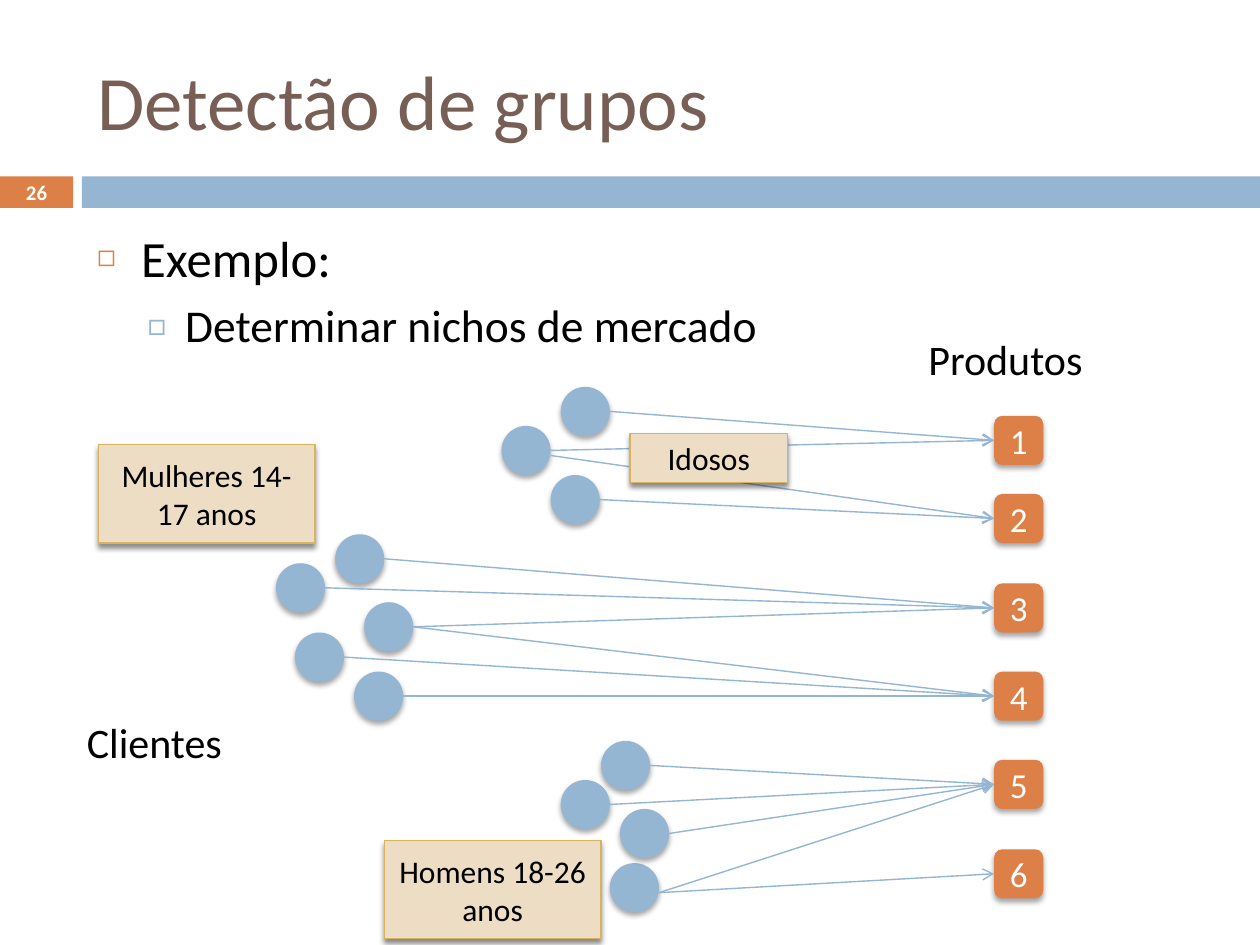
from lxml import etree
from pptx import Presentation
from pptx.dml.color import RGBColor
from pptx.enum.shapes import MSO_CONNECTOR, MSO_SHAPE
from pptx.enum.text import MSO_ANCHOR, MSO_AUTO_SIZE, PP_ALIGN
from pptx.oxml.ns import qn
from pptx.util import Inches, Pt

RECT, ROUND, OVAL = MSO_SHAPE.RECTANGLE, MSO_SHAPE.ROUNDED_RECTANGLE, MSO_SHAPE.OVAL
STRAIGHT = MSO_CONNECTOR.STRAIGHT
LEFT, MID = PP_ALIGN.LEFT, PP_ALIGN.CENTER
TOP, CENTER = MSO_ANCHOR.TOP, MSO_ANCHOR.MIDDLE
FIXED = MSO_AUTO_SIZE.NONE

WIDE, TALL = Inches(10), Inches(7.5)
COL, ROW = WIDE / 10, TALL / 7.5
BLUE, RUST, BROWN, SAND, GOLD = "94B6D2", "DD8047", "775F55", "EDDDC4", "D8B25C"
BLACK, WHITE = "000000", "FFFFFF"
FONT = "Calibri"
SIDE, THIN = 0.39, 0.79
SOFT, DEEP = (35, 2), (45, 2.4)

ITEMS = [
    ("Exemplo:", 29, 7, 0.35, 0.35, "◻", RUST, 60),
    ("Determinar nichos de mercado", 26, 5.5, 0.7, 0.3, "□", BLUE, 70),
]
GOODS_X = 7.39
GOODS = [0.8, 1.42, 2.13, 2.83, 3.53, 4.24]
BUYERS = [
    (1.84, 2.52, [(4, 0)]),
    (2.16, 1.74, [(3, 0)]),
    (3.48, 0.88, [(1, 0), (2, 0.04)]),
    (3.95, 0.57, [(1, 0)]),
    (1.69, 1.97, [(3, 0)]),
    (2.39, 2.28, [(3, 0), (4, 0)]),
    (3.87, 1.27, [(2, 0)]),
    (2.31, 2.83, [(4, 0)]),
    (3.95, 3.69, [(5, 0)]),
    (4.27, 3.38, [(5, 0)]),
    (4.34, 4.35, [(5, 0.04), (6, 0.04)]),
    (4.42, 3.92, [(5, 0)]),
]
LABELS = [("Clientes", 0.09, 3.14, 1.72, 0.5), ("Produtos", 6.77, 0.1, 1.8, 0.5)]
NOTES = [
    ("Idosos", 4.5, 0.94, 1.25, 0.39),
    ("Mulheres 14-17 anos", 0.28, 1.03, 1.72, 0.78),
    ("Homens 18-26 anos", 2.55, 4.17, 1.72, 0.78),
]


def tint(code):
    """Turn a hex string into a colour."""
    return RGBColor.from_string(code)


def span(box, x, y, w, h):
    """Give the slide lengths of a part of a box, in columns and rows."""
    return [round(n) for n in ((box[0] + x) * COL, (box[1] + y) * ROW, w * COL, h * ROW)]


def node(root, tag, **attrs):
    """Add a drawing element under a parent."""
    return etree.SubElement(root, qn(tag), attrs)


def write(para, text, size=18, color=BLACK, bold=False, align=LEFT):
    """Put formatted text in a paragraph."""
    para.alignment = align
    run = para.add_run()
    run.text = text
    font = run.font
    font.name, font.size, font.bold = FONT, Pt(size), bold
    font.color.rgb = tint(color)


def frame(shape, anchor):
    """Make the text frame of a shape wrap at a fixed size."""
    body = shape.text_frame
    body.word_wrap, body.auto_size, body.vertical_anchor = True, FIXED, anchor
    return body


def label(slide, area, text, anchor=TOP, **style):
    """Add a text box."""
    box = slide.shapes.add_textbox(*area)
    write(frame(box, anchor).paragraphs[0], text, **style)


def block(slide, kind, area, fill, edge=None, shade=None, text=None, **style):
    """Add a filled shape with optional edge, shadow and centred text."""
    shape = slide.shapes.add_shape(kind, *area)
    shape.fill.solid()
    shape.fill.fore_color.rgb = tint(fill)
    shape.shadow.inherit = False
    if edge:
        shape.line.color.rgb = tint(edge)
        shape.line.width = Pt(THIN)
    else:
        shape.line.fill.background()
    if shade:
        alpha, drop = shade
        glow = node(shape.element.spPr.find(qn("a:effectLst")), "a:outerShdw",
                    blurRad=str(Pt(3)), dist=str(Pt(drop)), dir="5400000", rotWithShape="0")
        node(node(glow, "a:srgbClr", val=BLACK), "a:alpha", val=str(alpha * 1000))
    if text:
        write(frame(shape, CENTER).paragraphs[0], text, align=MID, **style)


def arrow(slide, start, end):
    """Draw a thin arrow between two points."""
    link = slide.shapes.add_connector(STRAIGHT, *start, *end)
    link.line.color.rgb = tint(BLUE)
    link.line.width = Pt(THIN)
    props = link.element.spPr
    node(props.find(qn("a:ln")), "a:tailEnd", type="arrow")
    node(props, "a:effectLst")


def seat(shape, area):
    """Move a placeholder to an area."""
    shape.left, shape.top, shape.width, shape.height = area


def head(slide, box):
    """Place the title above the band with the page number."""
    title = slide.shapes.title
    seat(title, span(box, 0.67, 0.25, 8.92, 1.08))
    write(frame(title, CENTER).paragraphs[0], "Detectão de grupos", size=44, color=BROWN)
    block(slide, RECT, span(box, 0, 1.4, 0.58, 0.25), RUST)
    block(slide, RECT, span(box, 0.65, 1.4, 9.35, 0.25), BLUE)
    label(slide, span(box, 0, 1.39, 0.58, 0.27), "26", anchor=CENTER,
          size=11.9, color=WHITE, bold=True, align=MID)


def points(slide, box):
    """Fill the body with the two bulleted levels."""
    body = slide.placeholders[1]
    seat(body, span(box, 0, 0, *box[2:]))
    text = frame(body, TOP)
    for level, (words, size, gap, left, hang, mark, color, share) in enumerate(ITEMS):
        para = text.add_paragraph() if level else text.paragraphs[0]
        para.level = level
        write(para, words, size=size)
        para.space_before = Pt(gap)
        props = para._p.get_or_add_pPr()
        props.set("marL", str(Inches(left)))
        props.set("indent", str(-Inches(hang)))
        node(node(props, "a:buClr"), "a:srgbClr", val=color)
        node(props, "a:buSzPct", val=str(share * 1000))
        node(props, "a:buFont", typeface=FONT)
        node(props, "a:buChar", char=mark)


def graph(slide, box):
    """Link the buyers to the goods and name the groups."""
    for x, y, _ in BUYERS:
        block(slide, OVAL, span(box, x, y, SIDE, SIDE), BLUE, shade=SOFT)
    for rank, y in enumerate(GOODS, 1):
        block(slide, ROUND, span(box, GOODS_X, y, SIDE, SIDE), RUST, shade=SOFT,
              text=str(rank), size=20, color=WHITE)
    for words, *area in LABELS:
        label(slide, span(box, *area), words, size=24)
    half = SIDE / 2
    for x, y, links in BUYERS:
        for rank, dip in links:
            start = span(box, x + SIDE, y + half + dip, 0, 0)[:2]
            end = span(box, GOODS_X, GOODS[rank - 1] + half, 0, 0)[:2]
            arrow(slide, start, end)
    for words, *area in NOTES:
        block(slide, RECT, span(box, *area), SAND, edge=GOLD, shade=DEEP, text=words)


def main():
    """Build and save the slide."""
    deck = Presentation()
    deck.slide_width, deck.slide_height = WIDE, TALL
    slide = deck.slides.add_slide(deck.slide_layouts[1])
    head(slide, (0, 0, 10, 1.65))
    points(slide, (0.67, 1.75, 8.92, 4.92))
    graph(slide, (0.5, 2.5, 9, 5))
    deck.save("out.pptx")


if __name__ == "__main__":
    main()
